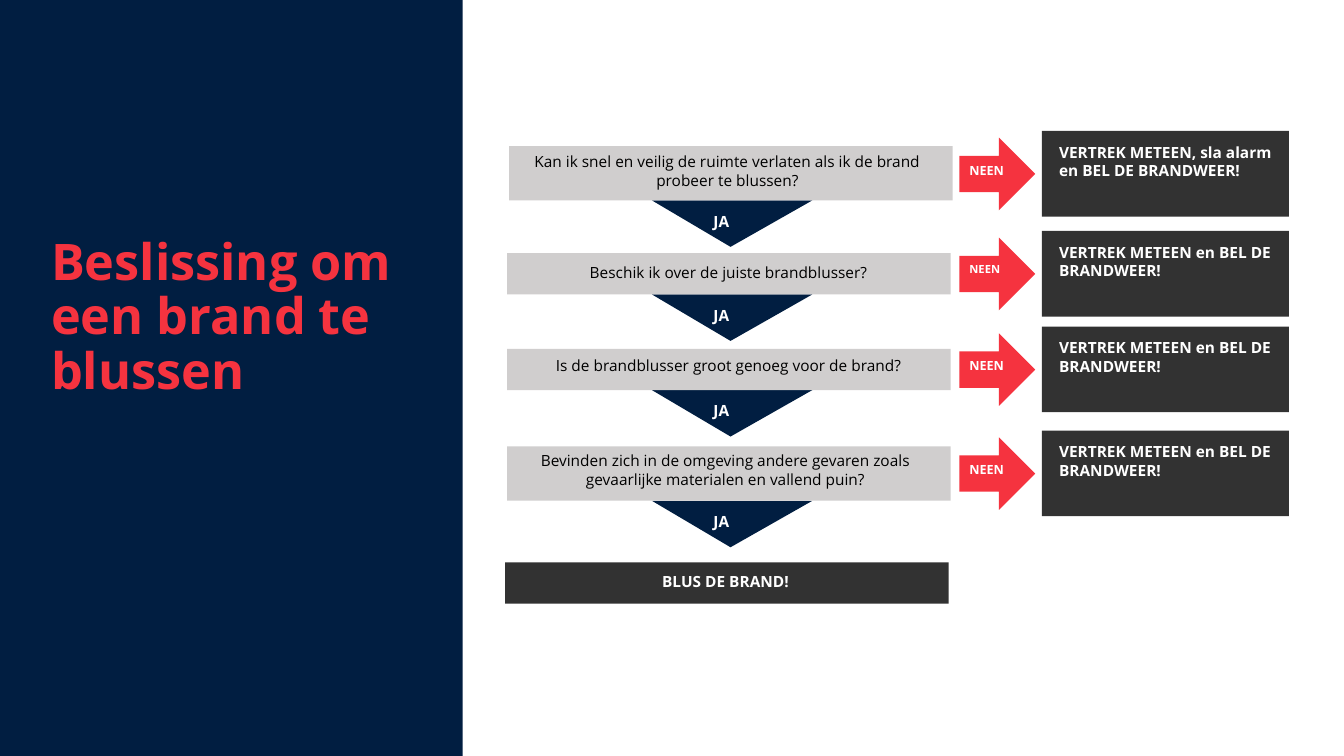
from pptx import Presentation
from pptx.dml.color import RGBColor
from pptx.enum.shapes import MSO_SHAPE as Shape
from pptx.enum.text import MSO_ANCHOR as Anchor, MSO_AUTO_SIZE as AutoSize, PP_ALIGN as Align
from pptx.util import Cm, Pt

TITLE = "Beslissing om een brand te blussen"
YES, NO = "JA", "NEEN"
FINAL = "BLUS DE BRAND!"
LEAVE = "VERTREK METEEN en BEL DE BRANDWEER!"
STEPS = [
    {"question": "Kan ik snel en veilig de ruimte verlaten als ik de brand probeer te blussen?",
     "bar": (12.83, 3.68, 11.18, 1.37), "label": (13.18, 3.71, 10.31, 1.19),
     "answer": "VERTREK METEEN, sla alarm en BEL DE BRANDWEER!", "answer_top": 3.3, "no_size": 9},
    {"question": "Beschik ik over de juiste brandblusser?",
     "bar": (12.78, 6.38, 11.18, 1.04), "label": (13.21, 6.5, 10.31, 0.74),
     "answer": LEAVE, "answer_top": 5.82, "no_size": 8},
    {"question": "Is de brandblusser groot genoeg voor de brand?",
     "bar": (12.78, 8.79, 11.18, 1.04), "label": (13.21, 8.86, 10.31, 0.74),
     "answer": LEAVE, "answer_top": 8.23, "no_size": 9},
    {"question": "Bevinden zich in de omgeving andere gevaren zoals "
                 "gevaarlijke materialen en vallend puin?",
     "bar": (12.78, 11.25, 11.18, 1.37), "label": (13.13, 11.25, 10.31, 1.19),
     "answer": LEAVE, "answer_top": 10.85, "no_size": 9},
]
COLOURS = {"navy": "011E41", "red": "F5333F", "grey": "D0CECE",
           "dark": "323232", "white": "FFFFFF", "black": "000000"}
FONT = "Open Sans"


def add_block(page, kind, place, colour):
    shape = page.shapes.add_shape(kind, *map(Cm, place))
    shape.shadow.inherit = False
    shape.fill.solid()
    shape.fill.fore_color.rgb = RGBColor.from_string(COLOURS[colour])
    shape.line.fill.background()
    return shape


def add_text(page, text, place, size=11, colour="white", bold=True, align=Align.LEFT, grow=True):
    box = page.shapes.add_textbox(*map(Cm, place))
    frame = box.text_frame
    frame.text = text
    frame.word_wrap = True
    frame.auto_size = AutoSize.SHAPE_TO_FIT_TEXT if grow else AutoSize.NONE
    para = frame.paragraphs[0]
    para.alignment = align
    font = para.runs[0].font
    font.name, font.size, font.bold = FONT, Pt(size), bold
    font.color.rgb = RGBColor.from_string(COLOURS[colour])
    return frame


def add_step(page, step):
    left, top, width, height = step["bar"]
    yes_top = top + height
    triangle = add_block(page, Shape.ISOSCELES_TRIANGLE, (16.43, yes_top, 4.04, 1.17), "navy")
    triangle.rotation = 180
    triangle.adjustments[0] = 0.51
    add_text(page, YES, (17.73, yes_top + 0.16, 1.45, 0.74))

    add_block(page, Shape.RECTANGLE, step["bar"], "grey")
    add_text(page, step["question"], step["label"], colour="black", bold=False, align=Align.CENTER)

    answer_top = step["answer_top"]
    inner_top = answer_top + 0.17
    add_block(page, Shape.RIGHT_ARROW, (24.18, inner_top, 1.91, 1.83), "red")
    add_text(page, NO, (24.18, inner_top + 0.5, 1.47, 0.64), size=step["no_size"])
    add_block(page, Shape.RECTANGLE, (26.26, answer_top, 6.22, 2.16), "dark")
    add_text(page, step["answer"], (26.44, inner_top, 5.87, 1.68))


def main():
    """Build the decision slide on whether to fight a fire."""
    deck = Presentation()
    deck.slide_width, deck.slide_height = Cm(33.87), Cm(19.05)
    page = deck.slides.add_slide(deck.slide_layouts[6])

    add_block(page, Shape.RECTANGLE, (-0.05, -0.03, 11.71, 19.08), "navy")
    title = add_text(page, TITLE, (1.04, 1.78, 9.55, 12.5), size=36, colour="red", grow=False)
    title.vertical_anchor = Anchor.MIDDLE
    title.paragraphs[0].line_spacing = 0.9

    for step in STEPS:
        add_step(page, step)

    add_block(page, Shape.RECTANGLE, (12.73, 14.17, 11.18, 1.04), "dark")
    add_text(page, FINAL, (13.13, 14.3, 10.31, 0.64), align=Align.CENTER, grow=False)
    deck.save("out.pptx")


if __name__ == "__main__":
    main()
